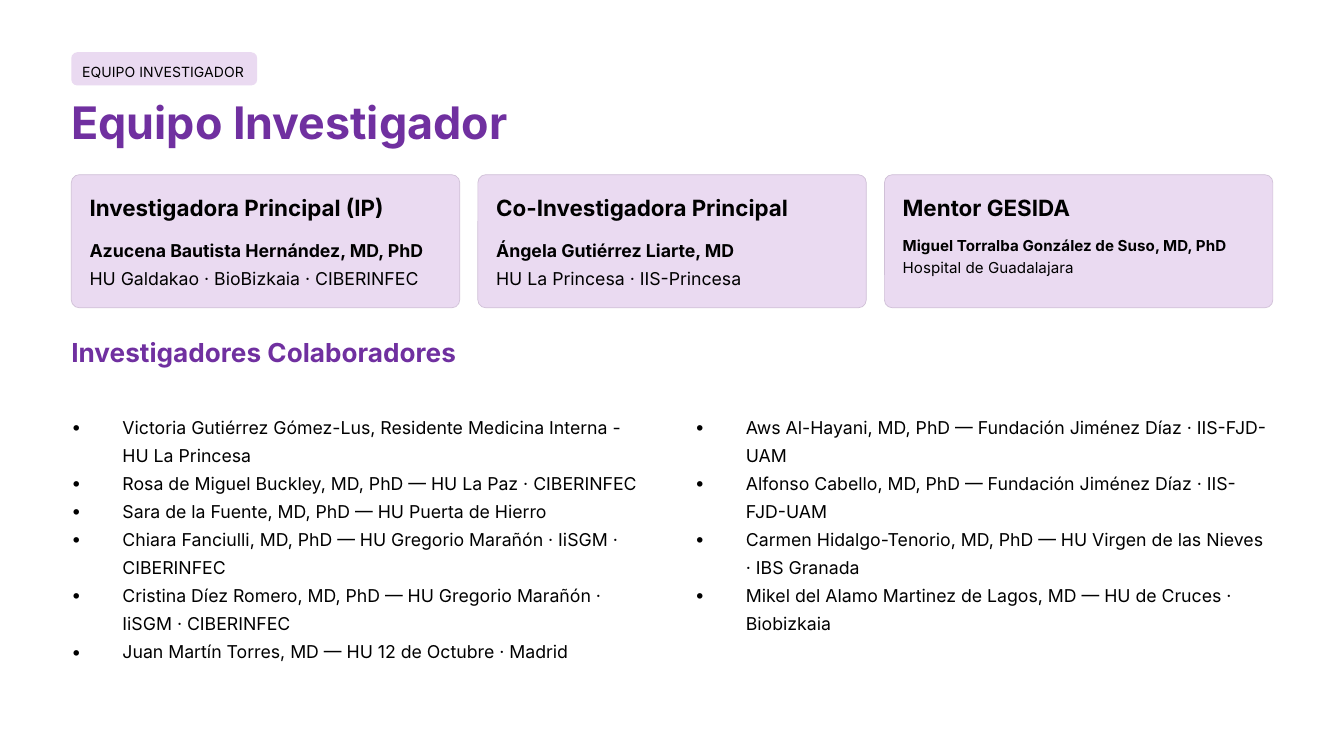
from dataclasses import dataclass

from lxml import etree
from pptx import Presentation
from pptx.dml.color import RGBColor
from pptx.enum import shapes, text
from pptx.oxml import ns
from pptx.util import Pt

FONT = "Inter"
COLORS = {"purple": "7030A0", "lilac": "EADAF1", "border": "D0C0D7", "black": "000000"}
LEFT = 38.2
CARD_TOP, CARD_WIDTH, CARD_HEIGHT, CARD_STEP = 93.6, 208.1, 71.3, 217.8
CARD_PADDING = 9.8
LIST_TOP, LIST_WIDTH, LIST_STEP = 219.6, 309.6, 334
BULLET_INDENT = 27.4


@dataclass
class Card:
    role: str
    name: str
    center: str
    size: float = 9.5
    spacing: float = 1.32


CARDS = [
    Card("Investigadora Principal (IP)", "Azucena Bautista Hernández, MD, PhD",
         "HU Galdakao · BioBizkaia · CIBERINFEC"),
    Card("Co-Investigadora Principal", "Ángela Gutiérrez Liarte, MD",
         "HU La Princesa · IIS-Princesa"),
    Card("Mentor GESIDA", "Miguel Torralba González de Suso, MD, PhD",
         "Hospital de Guadalajara", size=8.1, spacing=1.22),
]

COLLABORATORS = [
    [
        "Victoria Gutiérrez Gómez-Lus, Residente Medicina Interna - HU La Princesa",
        "Rosa de Miguel Buckley, MD, PhD — HU La Paz · CIBERINFEC",
        "Sara de la Fuente, MD, PhD — HU Puerta de Hierro",
        "Chiara Fanciulli, MD, PhD — HU Gregorio Marañón · IiSGM · CIBERINFEC",
        "Cristina Díez Romero, MD, PhD — HU Gregorio Marañón · IiSGM · CIBERINFEC",
        "Juan Martín Torres, MD — HU 12 de Octubre · Madrid",
    ],
    [
        "Aws Al-Hayani, MD, PhD — Fundación Jiménez Díaz · IIS-FJD-UAM",
        "Alfonso Cabello, MD, PhD — Fundación Jiménez Díaz · IIS-FJD-UAM",
        "Carmen Hidalgo-Tenorio, MD, PhD — HU Virgen de las Nieves · IBS Granada",
        "Mikel del Alamo Martinez de Lagos, MD — HU de Cruces · Biobizkaia",
    ],
]


def place(shape, left: float, top: float, width: float, height: float) -> None:
    shape.left, shape.top = Pt(left), Pt(top)
    shape.width, shape.height = Pt(width), Pt(height)


def add_bullet(paragraph) -> None:
    properties = paragraph._p.get_or_add_pPr()
    properties.set("marL", str(Pt(BULLET_INDENT)))
    properties.set("indent", str(-Pt(BULLET_INDENT)))
    etree.SubElement(properties, ns.qn("a:buFont"), typeface=FONT)
    etree.SubElement(properties, ns.qn("a:buChar"), char="•")


def write(shape, *lines: str, size: float, color: str = "black", spacing: float = 1.04,
          bold_lines: int = 0, bullets: bool = False) -> None:
    """Fill a shape with one paragraph per line; the first bold_lines are bold."""
    frame = shape.text_frame
    frame.margin_left = frame.margin_top = frame.margin_right = frame.margin_bottom = 0
    frame.word_wrap = True
    frame.auto_size = text.MSO_AUTO_SIZE.NONE
    frame.vertical_anchor = text.MSO_ANCHOR.TOP
    for index, line in enumerate(lines):
        paragraph = frame.add_paragraph() if index else frame.paragraphs[0]
        if bullets:
            add_bullet(paragraph)
        paragraph.alignment = text.PP_ALIGN.LEFT
        paragraph.line_spacing = spacing
        paragraph.space_before = Pt(0)
        run = paragraph.add_run()
        run.text = line
        run.font.name = FONT
        run.font.size = Pt(size)
        run.font.bold = index < bold_lines
        run.font.color.rgb = RGBColor.from_string(COLORS[color])


def add_text(slide, left: float, top: float, width: float, height: float,
             *lines: str, **text_format) -> None:
    box = slide.shapes.add_textbox(Pt(left), Pt(top), Pt(width), Pt(height))
    write(box, *lines, **text_format)


def add_panel(slide, left: float, top: float, width: float, height: float,
              rounding: float, border: bool = False) -> None:
    panel = slide.shapes.add_shape(shapes.MSO_SHAPE.ROUNDED_RECTANGLE,
                                   Pt(left), Pt(top), Pt(width), Pt(height))
    panel.adjustments[0] = rounding
    panel.shadow.inherit = False
    panel.fill.solid()
    panel.fill.fore_color.rgb = RGBColor.from_string(COLORS["lilac"])
    if border:
        panel.line.color.rgb = RGBColor.from_string(COLORS["border"])
        panel.line.width = Pt(0.38)
    else:
        panel.line.fill.background()


def add_card(slide, left: float, card: Card) -> None:
    add_panel(slide, left, CARD_TOP, CARD_WIDTH, CARD_HEIGHT, 0.06, border=True)
    text_left = left + CARD_PADDING
    add_text(slide, text_left, 103.7, 194, 15, card.role, size=12, bold_lines=1)
    add_text(slide, text_left, 124.6, 188, 30, card.name, card.center,
             size=card.size, spacing=card.spacing, bold_lines=1)


def main() -> None:
    presentation = Presentation()
    presentation.slide_width, presentation.slide_height = Pt(720), Pt(405)
    slide = presentation.slides.add_slide(presentation.slide_layouts.get_by_name("Two Content"))
    title, *lists = slide.placeholders

    # Section tag and title
    add_panel(slide, LEFT, 28, 99.6, 17.8, 0.18)
    add_text(slide, 44, 31, 124, 12, "EQUIPO INVESTIGADOR", size=7.5, spacing=1.32)
    place(title, LEFT, 49.7, 276, 30)
    write(title, "Equipo Investigador", size=24, color="purple", bold_lines=1)

    # Lead investigators
    for index, card in enumerate(CARDS):
        add_card(slide, LEFT + index * CARD_STEP, card)

    # Collaborators in two columns
    add_text(slide, LEFT, 179.3, 248, 18, "Investigadores Colaboradores",
             size=14, color="purple", bold_lines=1)
    for index, (placeholder, people) in enumerate(zip(lists, COLLABORATORS)):
        place(placeholder, LEFT + index * LIST_STEP, LIST_TOP, LIST_WIDTH, 154)
        write(placeholder, *people, size=9.5, spacing=1.32, bullets=True)

    presentation.save("out.pptx")


if __name__ == "__main__":
    main()
